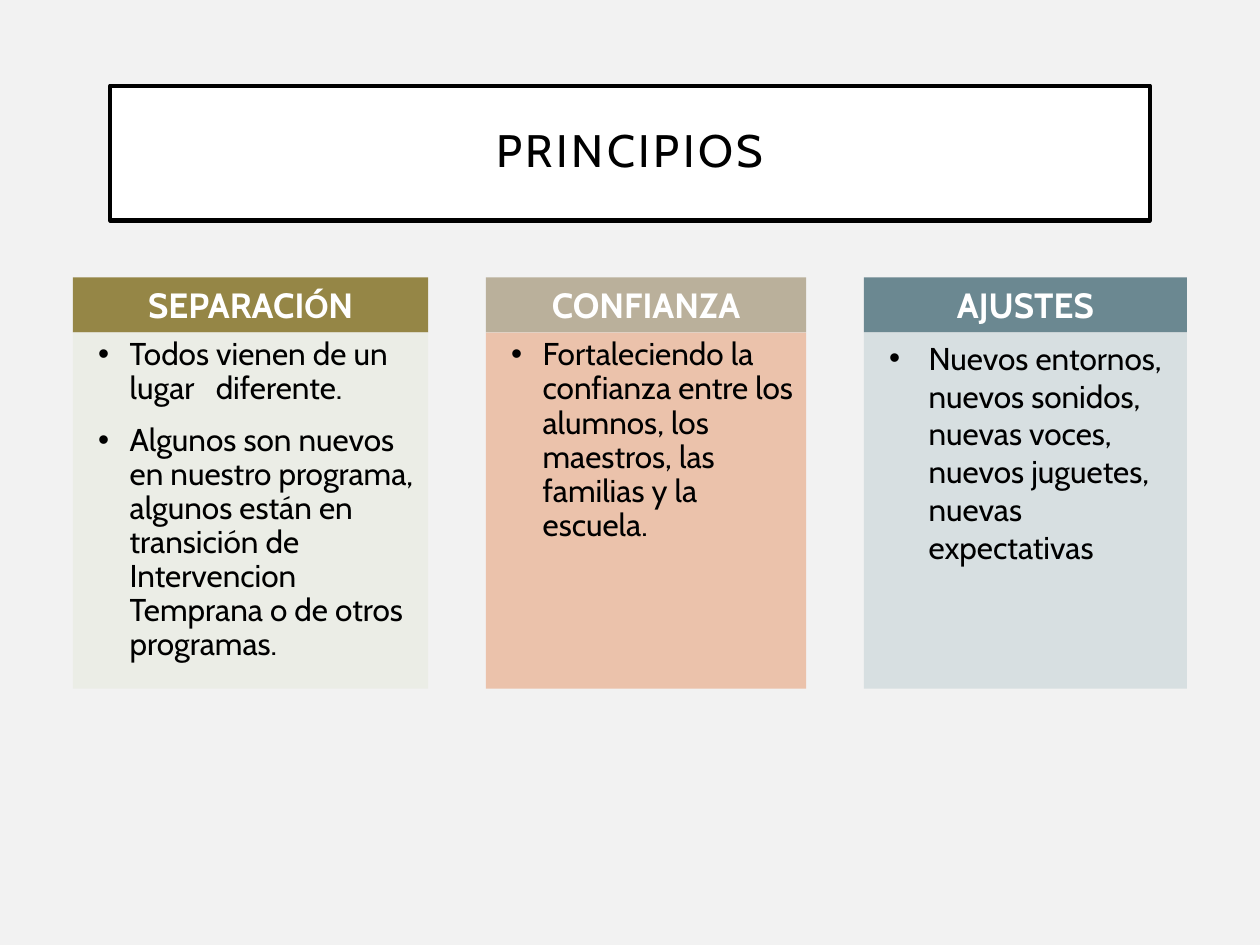
import dataclasses

import lxml.etree
import pptx
import pptx.dml.color
import pptx.enum.shapes
import pptx.enum.text
import pptx.oxml.ns
import pptx.util

Pt = pptx.util.Pt
ALIGN = pptx.enum.text.PP_ALIGN
ANCHOR = pptx.enum.text.MSO_ANCHOR


@dataclasses.dataclass(frozen=True)
class Theme:
    background: str = "F2F2F2"
    black: str = "000000"
    white: str = "FFFFFF"
    headers: tuple = ("958646", "BAB09B", "6B8891")
    bodies: tuple = ("EBEDE6", "EBC2AB", "D7DFE1")
    font: str = "Cabin"
    accent_font: str = "Calibri"
    title_size: int = 26
    header_size: int = 20
    body_size: int = 18


def rgb(value):
    return pptx.dml.color.RGBColor.from_string(value)


def write_text(p, text, *, font, size, color, bold=False, tracking=0,
               align=ALIGN.LEFT, line_spacing=1.0, before=0):
    p.alignment = align
    p.line_spacing = line_spacing
    p.space_before = Pt(before)
    r = p.add_run()
    r.text = text
    r.font.name = font
    r.font.size = Pt(size)
    r.font.bold = bold
    r.font.color.rgb = rgb(color)
    if tracking:
        r._r.get_or_add_rPr().set("spc", str(tracking * 100))


def add_bullet(p, indent):
    pPr = p._p.get_or_add_pPr()
    pPr.set("marL", str(Pt(indent)))
    pPr.set("indent", str(-Pt(indent)))
    qn = pptx.oxml.ns.qn
    lxml.etree.SubElement(pPr, qn("a:buFont")).set("typeface", "Arial")
    lxml.etree.SubElement(pPr, qn("a:buChar")).set("char", "•")


class SlideBuilder:
    def __init__(self, prs, theme):
        self.theme = theme
        self.slide = prs.slides.add_slide(prs.slide_layouts[6])
        fill = self.slide.background.fill
        fill.solid()
        fill.fore_color.rgb = rgb(theme.background)

    def box(self, left, top, width, height, color, anchor, insets):
        sp = self.slide.shapes.add_shape(
            pptx.enum.shapes.MSO_SHAPE.RECTANGLE,
            Pt(left), Pt(top), Pt(width), Pt(height))
        sp.shadow.inherit = False
        sp.fill.solid()
        sp.fill.fore_color.rgb = rgb(color)
        sp.line.fill.background()
        tf = sp.text_frame
        tf.word_wrap = True
        tf.vertical_anchor = anchor
        (tf.margin_left, tf.margin_top,
         tf.margin_right, tf.margin_bottom) = map(Pt, insets)
        return sp

    def title(self, text, left, top, width, height):
        t = self.theme
        sp = self.box(left, top, width, height, t.white, ANCHOR.MIDDLE, (14.4,) * 4)
        sp.line.color.rgb = rgb(t.black)
        sp.line.width = Pt(2.5)
        write_text(sp.text_frame.paragraphs[0], text, font=t.font,
                   size=t.title_size, color=t.black, tracking=2,
                   align=ALIGN.CENTER, line_spacing=0.9)

    def header(self, parts, left, top, width, height, color):
        t = self.theme
        sp = self.box(left, top, width, height, color, ANCHOR.MIDDLE,
                      (7.2, 3.6, 7.2, 3.6))
        for text, font in parts:
            write_text(sp.text_frame.paragraphs[0], text, font=font,
                       size=t.header_size, color=t.white, bold=True,
                       align=ALIGN.CENTER)

    def bullets(self, items, left, top, width, height, color, indent, line_spacing):
        t = self.theme
        sp = self.box(left, top, width, height, color, ANCHOR.TOP,
                      (14.4, 3.6, 7.2, 3.6))
        tf = sp.text_frame
        for i, text in enumerate(items):
            p = tf.add_paragraph() if i else tf.paragraphs[0]
            write_text(p, text, font=t.font, size=t.body_size, color=t.black,
                       line_spacing=line_spacing, before=10 if i else 0)
            add_bullet(p, indent)


def main():
    theme = Theme()
    prs = pptx.Presentation()
    prs.slide_width, prs.slide_height = Pt(720), Pt(540)
    s = SlideBuilder(prs, theme)
    s.title("PRINCIPIOS", 63, 49, 594, 77)

    f = theme.font
    columns = [
        (203, [("SEPARACI", f), ("Ó", theme.accent_font), ("N", f)],
         ["Todos vienen de un lugar   diferente.",
          "Algunos son nuevos en nuestro programa, algunos están en "
          "transición de Intervencion Temprana o de otros programas."], 18, 0.9),
        (183, [("CONFIANZA", f)],
         ["Fortaleciendo la confianza entre los alumnos, los maestros, "
          "las familias y la escuela."], 18, 0.9),
        (184.5, [("AJUSTES", f)],
         ["Nuevos entornos, nuevos sonidos, nuevas voces, nuevos juguetes, "
          "nuevas expectativas"], 22.5, 1.0),
    ]
    left, top, gap = 41.7, 158.5, 33
    header_height, body_height = 31.5, 203.5
    for column, header_color, body_color in zip(columns, theme.headers, theme.bodies):
        width, heading, items, indent, line_spacing = column
        s.header(heading, left, top, width, header_height, header_color)
        s.bullets(items, left, top + header_height, width, body_height,
                  body_color, indent, line_spacing)
        left += width + gap

    prs.save("out.pptx")


if __name__ == "__main__":
    main()
